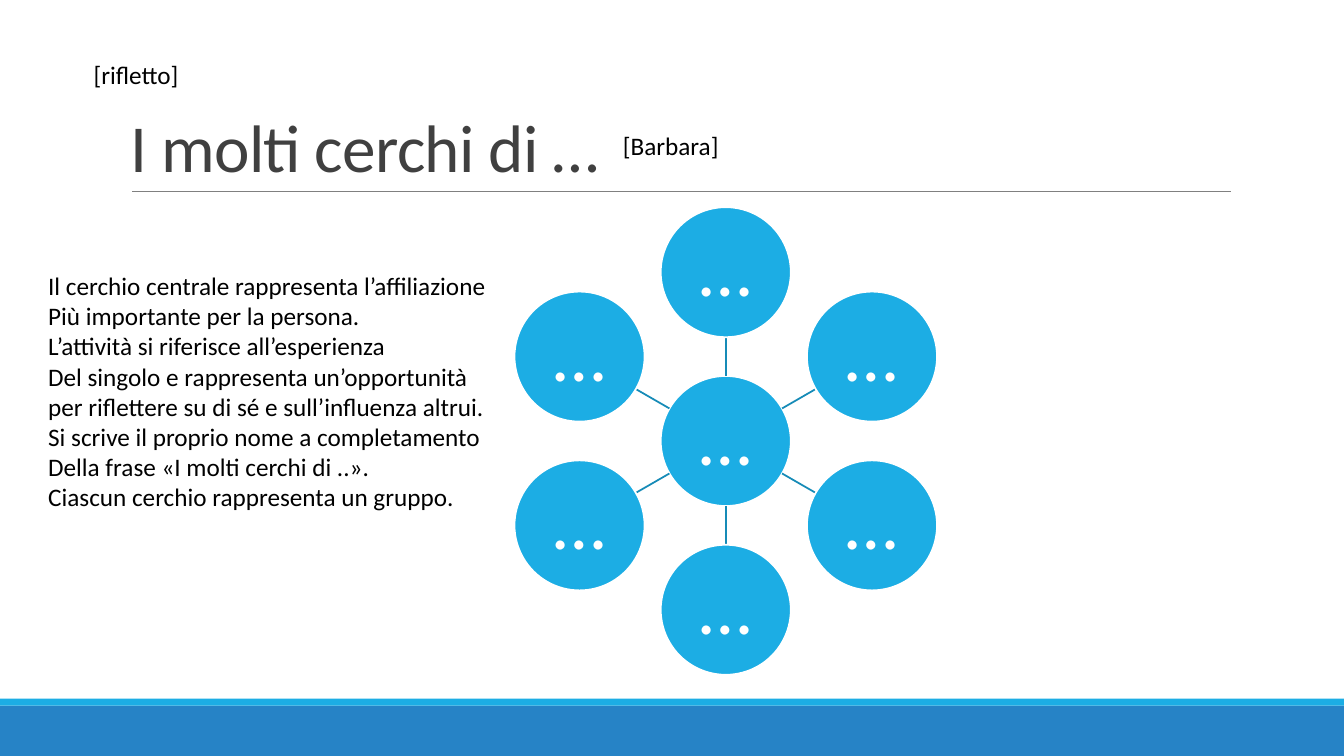
"""Build the slide about the many circles of a person."""
import math
from dataclasses import dataclass

from lxml import etree
from pptx import Presentation
from pptx import util as u
from pptx.dml import color
from pptx.enum import shapes, text
from pptx.oxml import ns

WIDTH, HEIGHT = u.Inches(13.33), u.Inches(7.5)
FONT = "Calibri"
COLOURS = {
    "bar": "2683C6",
    "accent": "1CADE4",
    "spoke": "168BB7",
    "rule": "808080",
    "title": "404040",
    "ink": "000000",
    "paper": "FFFFFF",
}
CENTRE_X, CENTRE_Y = 54.0, 58.33
DISC_RADIUS, RING_RADIUS = 8.6, 22.33
RING_COUNT = 6


@dataclass(frozen=True)
class Area:
    """Place and size in percent of the slide's width and height."""
    left: float
    top: float
    width: float
    height: float


@dataclass(frozen=True)
class Band:
    """A plain coloured strip across the slide."""
    area: Area
    colour: str


@dataclass(frozen=True)
class Note:
    """A block of black text, one paragraph per line."""
    area: Area
    lines: tuple[str, ...]


BANDS = (
    Band(Area(0, 93.33, 100, 6.67), "bar"),
    Band(Area(0, 92.4, 100, 0.93), "accent"),
)
NOTES = (
    Note(Area(45.61, 16.53, 8.7, 5.33), ("[Barbara]",)),
    Note(Area(2.85, 35.07, 34.51, 33.6), (
        "Il cerchio centrale rappresenta l’affiliazione",
        "Più importante per la persona.",
        "L’attività si riferisce all’esperienza",
        "Del singolo e rappresenta un’opportunità",
        "per riflettere su di sé e sull’influenza altrui.",
        "Si scrive il proprio nome a completamento",
        "Della frase «I molti cerchi di ..».",
        "Ciascun cerchio rappresenta un gruppo.",
    )),
    Note(Area(6.23, 7.2, 7.95, 5.33), ("[rifletto]",)),
)


def across(share: float) -> int:
    """Turn a percentage of the slide's width into a length."""
    return round(WIDTH * share / 100)


def down(share: float) -> int:
    """Turn a percentage of the slide's height into a length."""
    return round(HEIGHT * share / 100)


def frame(area: Area) -> tuple[int, int, int, int]:
    """Return left, top, width and height as lengths."""
    return across(area.left), down(area.top), across(area.width), down(area.height)


def rgb(name: str) -> color.RGBColor:
    """Look up a named colour."""
    return color.RGBColor.from_string(COLOURS[name])


def write(shape, lines: tuple[str, ...], *, size: float, colour: str,
          align=text.PP_ALIGN.LEFT, anchor=text.MSO_ANCHOR.TOP,
          spacing: float = 1.0, tracking: int = 0, wrap: bool = True,
          inset: float | None = None) -> None:
    """Fill a shape with formatted paragraphs."""
    box = shape.text_frame
    box.word_wrap = wrap
    box.auto_size = text.MSO_AUTO_SIZE.NONE if wrap else text.MSO_AUTO_SIZE.SHAPE_TO_FIT_TEXT
    box.vertical_anchor = anchor
    if inset is not None:
        box.margin_left = box.margin_right = u.Inches(inset)
        box.margin_top = box.margin_bottom = u.Inches(inset)
    for index, line in enumerate(lines):
        para = box.add_paragraph() if index else box.paragraphs[0]
        para.alignment = align
        para.line_spacing = spacing
        span = para.add_run()
        span.text = line
        span.font.name = FONT
        span.font.size = u.Pt(size)
        span.font.color.rgb = rgb(colour)
        if tracking:
            span.font._element.set("spc", str(tracking))


def draw_line(page, start: tuple[int, int], end: tuple[int, int],
              colour: str, weight: float) -> None:
    """Draw a straight line without a shadow."""
    line = page.shapes.add_connector(shapes.MSO_CONNECTOR.STRAIGHT, *start, *end)
    line.line.color.rgb = rgb(colour)
    line.line.width = u.Pt(weight)
    etree.SubElement(line._element.spPr, ns.qn("a:effectLst"))


def draw_band(page, band: Band) -> None:
    """Draw a coloured strip."""
    shape = page.shapes.add_shape(shapes.MSO_SHAPE.RECTANGLE, *frame(band.area))
    shape.shadow.inherit = False
    shape.fill.solid()
    shape.fill.fore_color.rgb = rgb(band.colour)
    shape.line.fill.background()


def ring_point(angle: float, radius: float) -> tuple[int, int]:
    """Return the point at an angle and distance from the central circle."""
    reach = down(radius)
    return (round(across(CENTRE_X) + reach * math.cos(angle)),
            round(down(CENTRE_Y) + reach * math.sin(angle)))


def draw_disc(page, middle: tuple[int, int]) -> None:
    """Draw one circle with its ellipsis."""
    radius = down(DISC_RADIUS)
    disc = page.shapes.add_shape(shapes.MSO_SHAPE.OVAL, middle[0] - radius,
                                 middle[1] - radius, 2 * radius, 2 * radius)
    disc.shadow.inherit = False
    disc.fill.solid()
    disc.fill.fore_color.rgb = rgb("accent")
    disc.line.color.rgb = rgb("paper")
    disc.line.width = u.Pt(1.25)
    write(disc, ("…",), size=54, colour="paper", align=text.PP_ALIGN.CENTER,
          anchor=text.MSO_ANCHOR.MIDDLE, spacing=0.9, inset=0.04)


def draw_circles(page) -> None:
    """Draw the central circle and the ring joined to it."""
    draw_disc(page, ring_point(0, 0))
    for index in range(RING_COUNT):
        angle = math.tau * index / RING_COUNT - math.pi / 2
        draw_line(page, ring_point(angle, DISC_RADIUS),
                  ring_point(angle, RING_RADIUS - DISC_RADIUS), "spoke", 1.25)
        draw_disc(page, ring_point(angle, RING_RADIUS))


def main() -> None:
    """Build and save the deck."""
    deck = Presentation()
    deck.slide_width, deck.slide_height = WIDTH, HEIGHT
    page = deck.slides.add_slide(deck.slide_layouts[6])
    for band in BANDS:
        draw_band(page, band)
    draw_line(page, (across(9.83), down(25.33)), (across(91.6), down(25.33)), "rule", 0.5)
    title = page.shapes.add_textbox(*frame(Area(9, 4.13, 82.52, 21.2)))
    write(title, ("I molti cerchi di …",), size=48, colour="title",
          anchor=text.MSO_ANCHOR.BOTTOM, spacing=0.85, tracking=-50)
    draw_circles(page)
    for note in NOTES:
        box = page.shapes.add_textbox(*frame(note.area))
        write(box, note.lines, size=18, colour="ink", wrap=False)
    deck.save("out.pptx")


if __name__ == "__main__":
    main()
